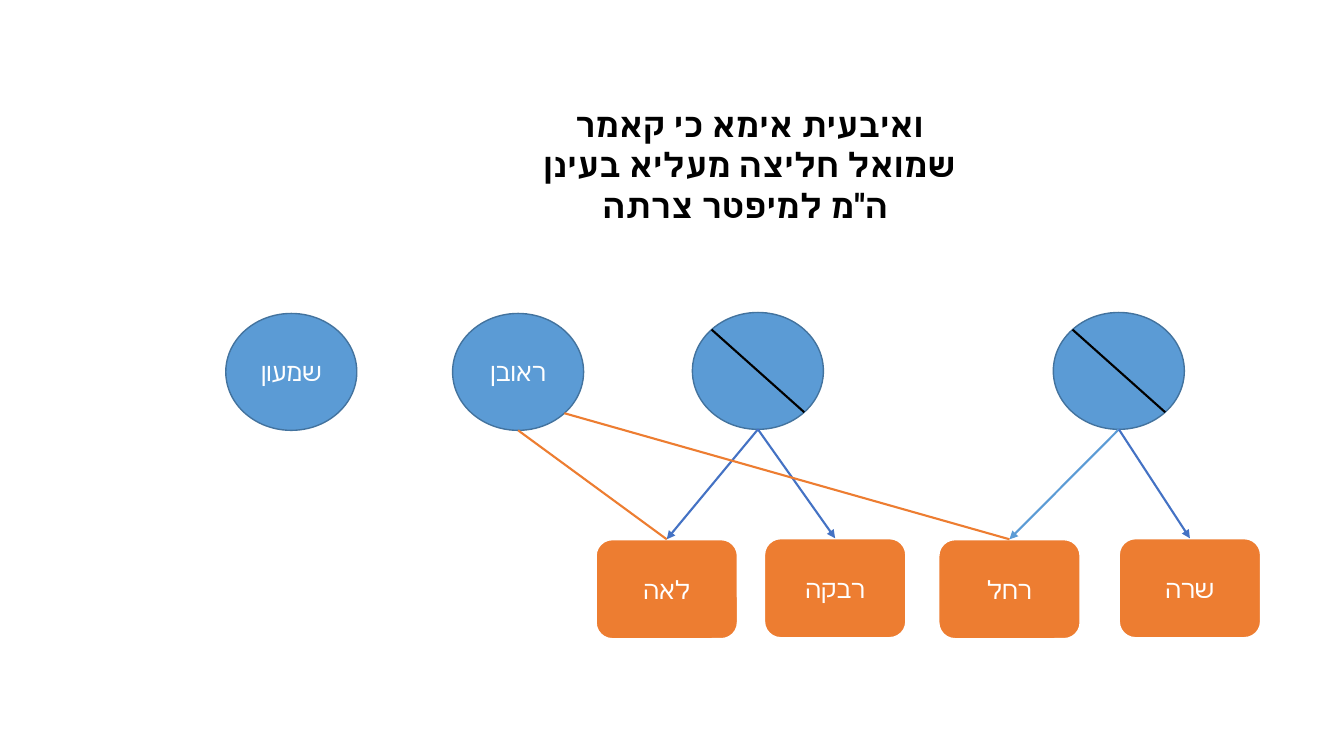
from dataclasses import dataclass
from math import sqrt

from lxml.etree import SubElement
from pptx import Presentation
from pptx.dml.color import RGBColor
from pptx.enum.shapes import MSO_CONNECTOR, MSO_SHAPE
from pptx.enum.text import MSO_ANCHOR, PP_ALIGN
from pptx.oxml.ns import qn
from pptx.shapes.autoshape import Shape
from pptx.shapes.connector import Connector
from pptx.text.text import TextFrame
from pptx.util import Pt

WHITE = RGBColor(0xFF, 0xFF, 0xFF)
BLACK = RGBColor(0, 0, 0)
LIGHT_BLUE = RGBColor(0x5B, 0x9B, 0xD5)
OUTLINE_BLUE = RGBColor(0x43, 0x73, 0x9E)
ARROW_BLUE = RGBColor(0x44, 0x72, 0xC4)
ORANGE = RGBColor(0xED, 0x7D, 0x31)

FONT = "Roboto"
MAN_WIDTH, MAN_HEIGHT = 93.6, 83.5
WOMAN_WIDTH, WOMAN_HEIGHT = 101.5, 71.3
DIAGONAL_INSET = (1 - sqrt(0.5)) / 2
TITLE = "ואיבעית אימא כי קאמר שמואל חליצה מעליא בעינן ה''מ למיפטר צרתה "


@dataclass(frozen=True)
class Man:
    left: float
    top: float
    name: str = ""
    deceased: bool = False

    def point(self, across: float, down: float) -> tuple[float, float]:
        return self.left + MAN_WIDTH * across, self.top + MAN_HEIGHT * down

    @property
    def bottom(self) -> tuple[float, float]:
        return self.point(0.5, 1)

    @property
    def upper_left(self) -> tuple[float, float]:
        return self.point(DIAGONAL_INSET, DIAGONAL_INSET)

    @property
    def lower_right(self) -> tuple[float, float]:
        return self.point(1 - DIAGONAL_INSET, 1 - DIAGONAL_INSET)


@dataclass(frozen=True)
class Woman:
    left: float
    top: float
    name: str


@dataclass(frozen=True)
class Bond:
    start: tuple[float, float]
    woman: Woman
    color: RGBColor
    arrow: bool = True


SHIMON = Man(161.3, 223.9, "שמעון")
REUVEN = Man(323.3, 223.9, "ראובן")
LEFT_BROTHER = Man(494.6, 223.2, deceased=True)
RIGHT_BROTHER = Man(752.4, 223.2, deceased=True)
MEN = (SHIMON, REUVEN, LEFT_BROTHER, RIGHT_BROTHER)

LEAH = Woman(425.5, 385.2, "לאה")
RIVKA = Woman(545.8, 384.5, "רבקה")
RACHEL = Woman(670.3, 385.2, "רחל")
SARAH = Woman(799.2, 384.5, "שרה")
WOMEN = (LEAH, RIVKA, RACHEL, SARAH)

BONDS = (
    Bond(RIGHT_BROTHER.bottom, RACHEL, LIGHT_BLUE),
    Bond(RIGHT_BROTHER.bottom, SARAH, ARROW_BLUE),
    Bond(LEFT_BROTHER.bottom, LEAH, ARROW_BLUE),
    Bond(LEFT_BROTHER.bottom, RIVKA, ARROW_BLUE),
    Bond(REUVEN.lower_right, RACHEL, ORANGE, arrow=False),
    Bond(REUVEN.bottom, LEAH, ORANGE, arrow=False),
)


def write_text(frame: TextFrame, text: str, size: float, color: RGBColor, bold: bool = False) -> None:
    frame.word_wrap = True
    paragraph = frame.paragraphs[0]
    paragraph.alignment = PP_ALIGN.CENTER
    run = paragraph.add_run()
    run.text = text
    run.font.name = FONT
    run.font.size = Pt(size)
    run.font.bold = bold
    run.font.color.rgb = color
    for tag in ("a:ea", "a:cs"):
        SubElement(run.font._element, qn(tag), typeface=FONT)


def style_shape(shape: Shape, name: str, fill: RGBColor, line: RGBColor, width: float) -> None:
    shape.shadow.inherit = False
    shape.fill.solid()
    shape.fill.fore_color.rgb = fill
    shape.line.color.rgb = line
    shape.line.width = Pt(width)
    if name:
        shape.text_frame.vertical_anchor = MSO_ANCHOR.MIDDLE
        write_text(shape.text_frame, name, 18, WHITE)


def add_line(shapes, start: tuple[float, float], end: tuple[float, float], color: RGBColor) -> Connector:
    connector = shapes.add_connector(MSO_CONNECTOR.STRAIGHT, *map(Pt, start + end))
    connector.line.color.rgb = color
    connector.line.width = Pt(1.5)
    SubElement(connector._element.spPr, qn("a:effectLst"))
    return connector


def draw_man(slide, man: Man) -> None:
    shapes = slide.shapes.add_group_shape().shapes if man.deceased else slide.shapes
    circle = shapes.add_shape(
        MSO_SHAPE.OVAL, Pt(man.left), Pt(man.top), Pt(MAN_WIDTH), Pt(MAN_HEIGHT)
    )
    style_shape(circle, man.name, LIGHT_BLUE, OUTLINE_BLUE, 1)
    if man.deceased:
        add_line(shapes, man.upper_left, man.lower_right, BLACK)


def draw_woman(slide, woman: Woman) -> Shape:
    box = slide.shapes.add_shape(
        MSO_SHAPE.ROUNDED_RECTANGLE,
        Pt(woman.left), Pt(woman.top), Pt(WOMAN_WIDTH), Pt(WOMAN_HEIGHT),
    )
    style_shape(box, woman.name, ORANGE, WHITE, 1.5)
    return box


def draw_bond(slide, bond: Bond, box: Shape) -> None:
    end = (bond.woman.left + WOMAN_WIDTH / 2, bond.woman.top)
    connector = add_line(slide.shapes, bond.start, end, bond.color)
    connector.end_connect(box, 0)
    if bond.arrow:
        SubElement(connector.line._get_or_add_ln(), qn("a:tailEnd"), type="triangle")


def main() -> None:
    presentation = Presentation()
    presentation.slide_width = Pt(960)
    presentation.slide_height = Pt(540)
    slide = presentation.slides.add_slide(presentation.slide_layouts[6])

    for man in MEN:
        draw_man(slide, man)
    boxes = {woman: draw_woman(slide, woman) for woman in WOMEN}
    for bond in BONDS:
        draw_bond(slide, bond, boxes[bond.woman])

    title = slide.shapes.add_textbox(Pt(364.3), Pt(70.6), Pt(342), Pt(94.3))
    write_text(title.text_frame, TITLE, 24, BLACK, bold=True)

    presentation.save("out.pptx")


if __name__ == "__main__":
    main()
